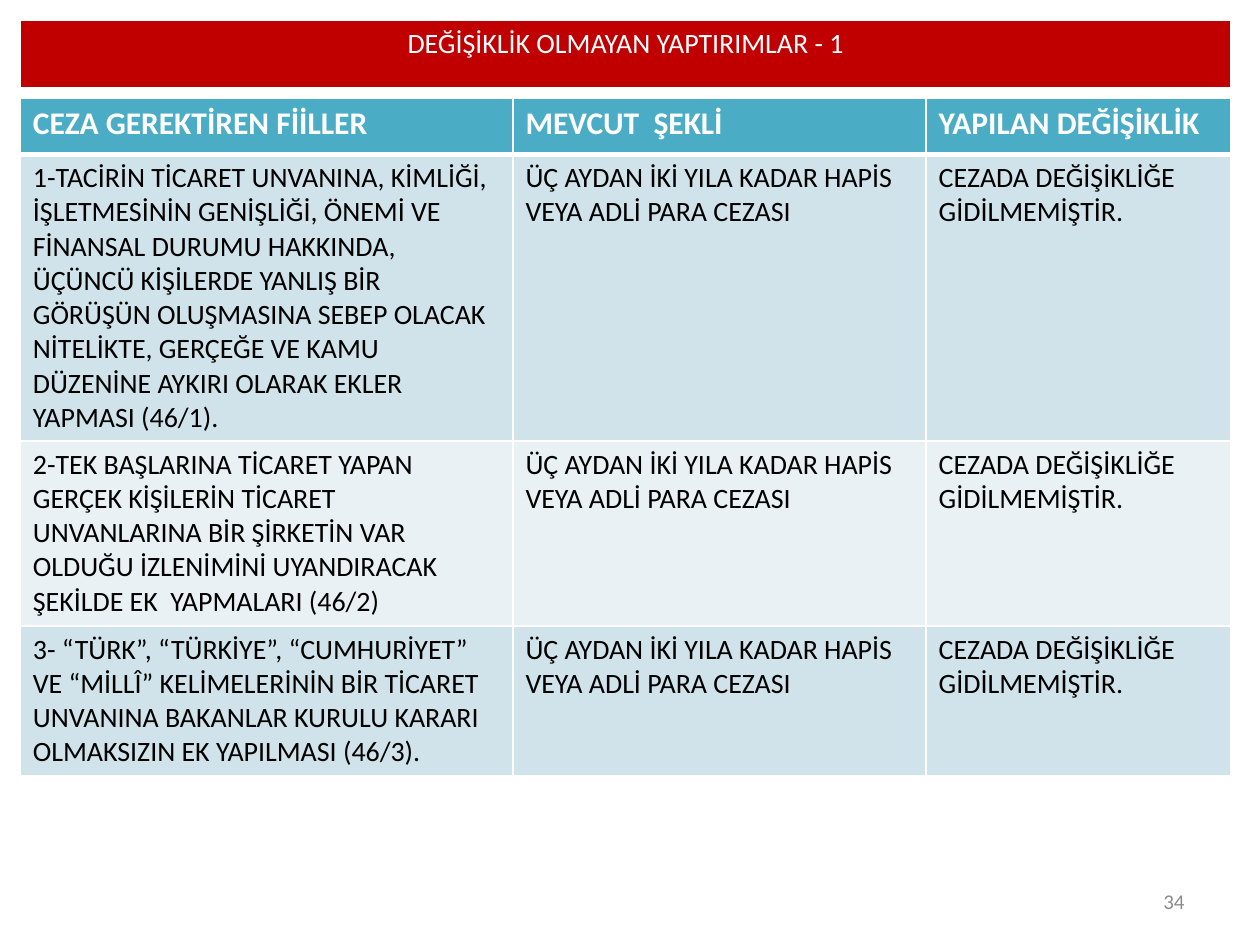
from lxml.etree import SubElement
from pptx import Presentation
from pptx.dml.color import RGBColor
from pptx.enum.text import MSO_ANCHOR, PP_ALIGN
from pptx.oxml.ns import qn
from pptx.util import Cm, Pt

FONT = "Calibri"
WHITE, BLACK, GRAY = "FFFFFF", "000000", "8C8C8C"
RED, TEAL = "C00000", "4BACC6"
BANDS = ["D0E3EA", "E9F1F5"]

TITLE = "DEĞİŞİKLİK OLMAYAN YAPTIRIMLAR - 1"
HEADERS = ["CEZA GEREKTİREN FİİLLER", "MEVCUT  ŞEKLİ", "YAPILAN DEĞİŞİKLİK"]
ACTS = [
    "1-TACİRİN TİCARET UNVANINA, KİMLİĞİ, İŞLETMESİNİN GENİŞLİĞİ, ÖNEMİ VE "
    "FİNANSAL DURUMU HAKKINDA, ÜÇÜNCÜ KİŞİLERDE YANLIŞ BİR GÖRÜŞÜN OLUŞMASINA "
    "SEBEP OLACAK NİTELİKTE, GERÇEĞE VE KAMU DÜZENİNE AYKIRI OLARAK EKLER "
    "YAPMASI (46/1).",
    "2-TEK BAŞLARINA TİCARET YAPAN GERÇEK KİŞİLERİN TİCARET UNVANLARINA BİR "
    "ŞİRKETİN VAR OLDUĞU İZLENİMİNİ UYANDIRACAK ŞEKİLDE EK  YAPMALARI (46/2)",
    "3- “TÜRK”, “TÜRKİYE”, “CUMHURİYET” VE “MİLLÎ” KELİMELERİNİN BİR TİCARET "
    "UNVANINA BAKANLAR KURULU KARARI OLMAKSIZIN EK YAPILMASI (46/3).",
]
PENALTY = "ÜÇ AYDAN İKİ YILA KADAR HAPİS VEYA ADLİ PARA CEZASI"
CHANGE = "CEZADA DEĞİŞİKLİĞE\nGİDİLMEMİŞTİR."
PAGE_NUMBER = "34"

LEFT = 0.41
COLUMN_WIDTHS = [9.93, 8.33, 6.15]
ROW_HEIGHTS = [1.14, 5.51, 3.73, 3.0]


def color(hex_code):
    return RGBColor.from_string(hex_code)


def write(frame, text, size, hex_code, bold=False, align=PP_ALIGN.LEFT):
    frame.text = text
    for para in frame.paragraphs:
        para.alignment = align
        font = para.font
        font.name, font.size, font.bold = FONT, Pt(size), bold
        font.color.rgb = color(hex_code)


def add_borders(cell, bottom):
    """Draw white cell borders, 1 pt wide except for the bottom one."""
    properties = cell._tc.get_or_add_tcPr()
    for tag, width in [("lnL", 1), ("lnR", 1), ("lnT", 1), ("lnB", bottom)]:
        line = SubElement(properties, qn(f"a:{tag}"), w=str(Pt(width)))
        fill = SubElement(line, qn("a:solidFill"))
        SubElement(fill, qn("a:srgbClr"), val=WHITE)


def style_cell(cell, text, fill, size, hex_code, bottom=1, **text_style):
    add_borders(cell, bottom)
    cell.fill.solid()
    cell.fill.fore_color.rgb = color(fill)
    write(cell.text_frame, text, size, hex_code, **text_style)


def add_grid(slide, top, widths, heights):
    frame = slide.shapes.add_table(len(heights), len(widths), Cm(LEFT), Cm(top),
                                   Cm(sum(widths)), Cm(sum(heights)))
    table = frame.table
    for column, width in zip(table.columns, widths):
        column.width = Cm(width)
    for row, height in zip(table.rows, heights):
        row.height = Cm(height)
    return table


deck = Presentation()
deck.slide_width, deck.slide_height = Cm(25.4), Cm(19.05)
slide = deck.slides.add_slide(deck.slide_layouts[6])

banner = add_grid(slide, 0.41, [sum(COLUMN_WIDTHS)], [1.4])
style_cell(banner.cell(0, 0), TITLE, RED, 16, WHITE, bottom=3,
           align=PP_ALIGN.CENTER)

sanctions = add_grid(slide, 1.98, COLUMN_WIDTHS, ROW_HEIGHTS)
for column, header in enumerate(HEADERS):
    style_cell(sanctions.cell(0, column), header, TEAL, 18, WHITE, bottom=3,
               bold=True)
for index, act in enumerate(ACTS):
    for column, text in enumerate([act, PENALTY, CHANGE]):
        style_cell(sanctions.cell(index + 1, column), text,
                   BANDS[index % 2], 16, BLACK)

number_box = slide.shapes.add_textbox(Cm(18.2), Cm(17.66), Cm(5.93), Cm(1.01))
number_box.text_frame.word_wrap = True
number_box.text_frame.vertical_anchor = MSO_ANCHOR.MIDDLE
write(number_box.text_frame, PAGE_NUMBER, 12, GRAY, align=PP_ALIGN.RIGHT)

deck.save("out.pptx")
